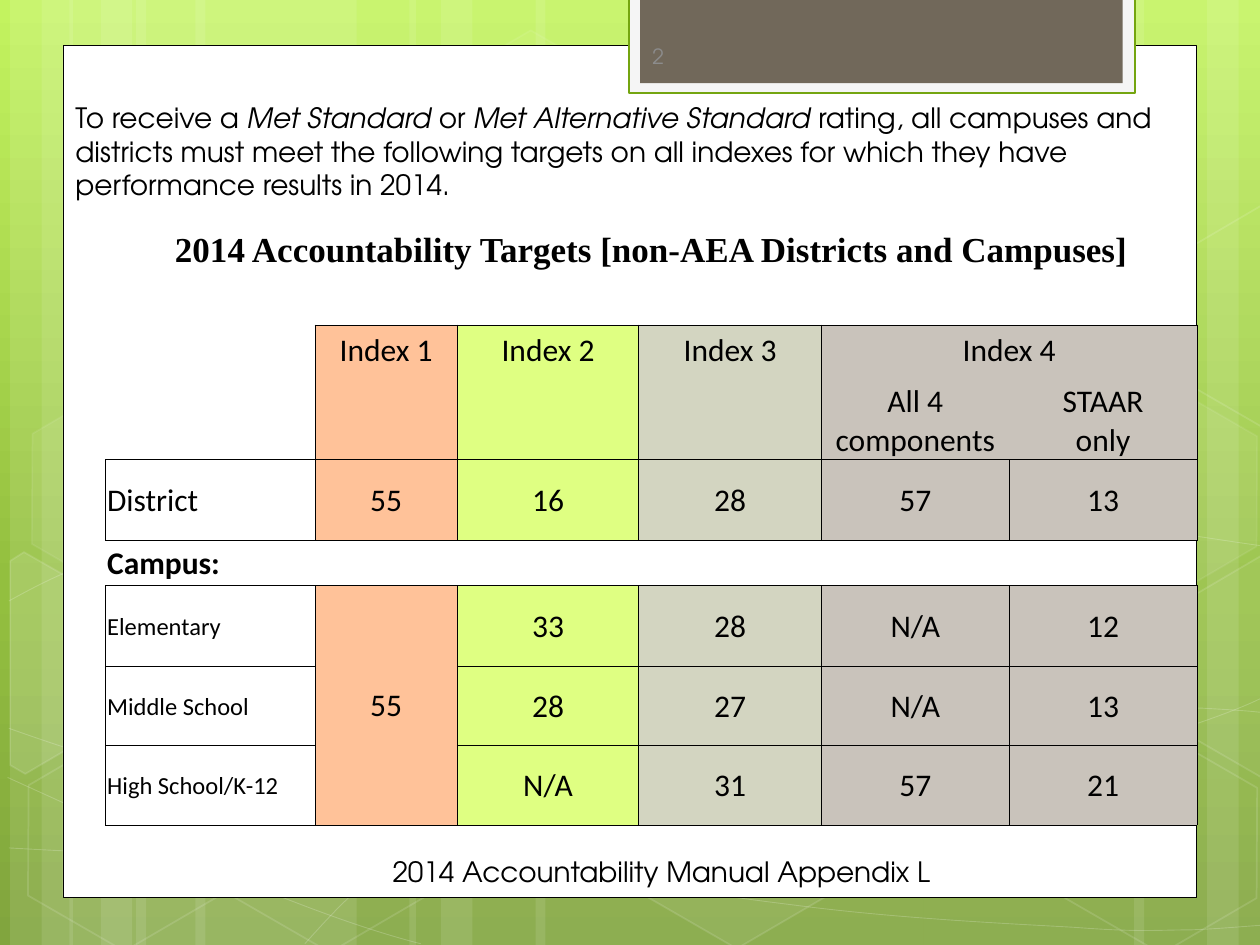
from copy import deepcopy
from itertools import product
from math import cos, radians, sin

from lxml.etree import SubElement
from pptx import Presentation
from pptx.dml.color import RGBColor
from pptx.enum.shapes import MSO_SHAPE as Preset
from pptx.enum.text import MSO_ANCHOR as Anchor, MSO_AUTO_SIZE as AutoSize, PP_ALIGN as Align
from pptx.oxml.ns import qn
from pptx.util import Inches, Pt

WHITE = RGBColor(0xFF, 0xFF, 0xFF)
BLACK = RGBColor(0, 0, 0)
GREEN = RGBColor(0x74, 0xA5, 0x10)
BROWN = RGBColor(0x71, 0x68, 0x5A)
PALE = RGBColor(0xF5, 0xF5, 0xF5)
GRAY = RGBColor(0x8C, 0x8C, 0x8C)
GRADIENT = [(0, RGBColor(0xC3, 0xF3, 0x5F)), (0.62, RGBColor(0x93, 0xBF, 0x3F)),
            (1, RGBColor(0x81, 0xA5, 0x3E))]
PEACH = RGBColor(0xFF, 0xC2, 0x99)
LIME = RGBColor(0xDF, 0xFF, 0x82)
SAGE = RGBColor(0xD3, 0xD5, 0xC1)
TAUPE = RGBColor(0xC9, 0xC3, 0xBB)
COLUMN_COLORS = [None, PEACH, LIME, SAGE, TAUPE, TAUPE]

HEADING_FONT = "TeX Gyre Adventor"
NO_GRID_STYLE = "{2D5ABB26-0587-4C30-8999-92F81FD0307C}"
TILT = 30

# Left edge, width and rotation of the full-height stripes
STRIPES = [(1.08, 1.75, 0), (0.08, 0.5, 0), (0.33, 0.83, 0), (1.55, 1.75, 0), (0.55, 0.5, 0),
           (0.8, 0.83, 0), (7.33, 1.75, 180), (9.58, 0.5, 180), (9, 0.83, 180),
           (4.25, 3.08, 0), (3.25, 0.5, 0), (3.5, 0.83, 0)]
# Each curve: a start point, then three points for every Bezier segment
CURVES = [
    [(0.07, 6.73), (0.61, 6.76), (1.15, 6.79), (1.9, 6.78), (2.65, 6.77), (3.58, 6.75),
     (4.58, 6.65), (5.58, 6.55), (7, 6.36), (7.92, 6.17), (8.83, 5.98), (9.77, 5.68), (10.07, 5.51)],
    [(0.07, 4.77), (0.36, 4.61), (0.65, 4.46), (1.21, 4.31), (1.78, 4.16), (2.59, 3.94),
     (3.47, 3.87), (4.36, 3.8), (5.44, 3.79), (6.54, 3.87), (7.64, 3.95), (9.47, 4.26), (10.07, 4.34)],
    [(0.06, 6.17), (1.27, 6.72), (2.47, 7.27), (3.34, 7.49)],
    [(0.07, 5.78), (0.38, 5.89), (0.7, 6), (1.28, 6.16), (1.86, 6.31), (2.73, 6.56), (3.57, 6.73),
     (4.4, 6.9), (5.45, 7.08), (6.28, 7.18), (7.11, 7.29), (8, 7.33), (8.53, 7.36),
     (9.05, 7.4), (9.19, 7.38), (9.45, 7.38), (9.71, 7.37), (9.89, 7.35), (10.07, 7.34)],
    [(2.42, 7.49), (2.6, 7.29), (2.78, 7.09), (3.02, 6.91), (3.26, 6.73), (3.6, 6.53), (3.88, 6.39),
     (4.16, 6.25), (4.33, 6.19), (4.7, 6.09), (5.06, 5.99), (5.73, 5.85), (6.08, 5.78),
     (6.44, 5.71), (6.49, 5.71), (6.8, 5.69), (7.11, 5.66), (7.6, 5.63), (7.94, 5.62),
     (8.29, 5.61), (8.86, 5.62), (8.86, 5.62), (9.08, 5.62), (9.31, 5.62), (9.53, 5.62),
     (9.71, 5.63), (9.88, 5.64), (9.97, 5.65), (10.06, 5.66), (10.03, 5.65), (10.06, 5.66)],
]
# Left, top, fill opacity and line opacity in percent
LEFT_HEXAGONS = [(3.34, 0.36, 4, 8), (4.97, 5.89, 6, 12)]
MIDDLE_HEXAGONS = [(0.11, 5.91, 0, 12), (0.14, 3.12, 7, 8), (1.74, 5.92, 0, 12),
                   (7.53, 4.53, 10, 12), (8.34, 5.93, 0, 12), (8.34, 3.14, 7, 8)]
# Hexagons cut off by the slide edge: center, points as seen and fill opacity
LEFT_CUT = [((0.36, 5.35), [(0.08, 4.45), (0.19, 4.38), (0.96, 4.82), (0.95, 5.7),
                            (0.2, 6.14), (0.08, 6.07)], 10)]
RIGHT_CUTS = [
    ((9.85, 5.2), [(9.26, 4.85), (10.01, 4.41), (10.09, 4.46), (10.09, 6.13),
                   (10.02, 6.17), (9.26, 5.73)], 4),
    ((9.85, 2.41), [(9.26, 2.07), (10.01, 1.63), (10.1, 1.68), (10.09, 3.35),
                    (10.02, 3.39), (9.26, 2.95)], 0),
]

COLUMN_WIDTHS = [1.66, 1.13, 1.44, 1.45, 1.49, 1.49]
ROW_HEIGHTS = [0.48, 0.44, 0.36, 0.71, 0.64, 0.36, 0.64, 0.63, 0.63, 0.36]
ROWS = [
    ["2014 Accountability Targets [non-AEA Districts and Campuses]"],
    [],
    ["", "Index 1", "Index 2", "Index 3", "Index 4"],
    ["", "", "", "", "All 4 components", "STAAR\nonly"],
    ["District", "55", "16", "28", "57", "13"],
    ["Campus:"],
    ["Elementary", "55", "33", "28", "N/A", "12"],
    ["Middle School", "", "28", "27", "N/A", "13"],
    ["High School/K-12", "", "N/A", "31", "57", "21"],
    [],
]
# Bordered sides of each cell: L, R, T, B
BORDERS = [[""] * 6, [""] + ["B"] * 5, ["R"] + ["LRT"] * 5,
           ["RB", "LRB", "LRB", "LRB", "LB", "RB"], ["LRTB"] * 6, ["TB"] * 6,
           ["LRTB"] * 6, ["LRTB"] * 6, ["LRTB"] * 6, ["T"] * 6]
MERGES = [(0, 0, 0, 5), (2, 4, 2, 5), (6, 1, 8, 1), (9, 2, 9, 4)]


def set_opacity(fill, percent):
    if percent < 100:
        color = fill._xPr.find(".//" + qn("a:srgbClr"))
        SubElement(color, qn("a:alpha"), val=str(percent * 1000))


def style_shape(shape, fill=None, line=None, width=1, fill_opacity=100, line_opacity=100):
    shape.shadow.inherit = False
    if fill is None or fill_opacity == 0:
        shape.fill.background()
    else:
        shape.fill.solid()
        shape.fill.fore_color.rgb = fill
        set_opacity(shape.fill, fill_opacity)
    if line is None:
        shape.line.fill.background()
    else:
        shape.line.color.rgb = line
        shape.line.width = Pt(width)
        set_opacity(shape.line.fill, line_opacity)


def add_preset(slide, preset, box, rotation=0, **style):
    shape = slide.shapes.add_shape(preset, *map(Inches, box))
    shape.rotation = rotation
    style_shape(shape, **style)
    return shape


def add_outline(slide, points, close, **style):
    first, *others = [(Inches(x), Inches(y)) for x, y in points]
    builder = slide.shapes.build_freeform(*first)
    builder.add_line_segments(others, close=close)
    shape = builder.convert_to_shape()
    style_shape(shape, **style)
    return shape


def add_curve(slide, controls, **style):
    """Draw the control polygon, then turn every three lines into one Bezier segment."""
    shape = add_outline(slide, controls, False, **style)
    outline = next(shape._element.iter(qn("a:moveTo"))).getparent()
    lines = outline.findall(qn("a:lnTo"))
    for i in range(0, len(lines), 3):
        segment = SubElement(outline, qn("a:cubicBezTo"))
        for line in lines[i:i + 3]:
            segment.append(line[0])
            outline.remove(line)


def add_hexagons(slide, hexagons):
    for left, top, fill_opacity, line_opacity in hexagons:
        hexagon = add_preset(slide, Preset.HEXAGON, (left, top, 1.75, 1.52), TILT, fill=WHITE,
                             line=WHITE, fill_opacity=fill_opacity, line_opacity=line_opacity)
        hexagon.adjustments[0], hexagon.adjustments[1] = 0.285, 1.155


def add_cut_hexagons(slide, hexagons):
    c, s = cos(radians(TILT)), sin(radians(TILT))
    for (cx, cy), points, opacity in hexagons:
        upright = [(cx + (x - cx) * c + (y - cy) * s, cy - (x - cx) * s + (y - cy) * c)
                   for x, y in points]
        add_outline(slide, upright, True, fill=WHITE, line=WHITE,
                    fill_opacity=opacity, line_opacity=12).rotation = TILT


def format_run(run, font, size, color=BLACK, bold=False, italic=False):
    run.font.name, run.font.size = font, Pt(size)
    run.font.bold, run.font.italic = bold, italic
    run.font.color.rgb = color


def add_text(slide, box, pieces, align=Align.LEFT, size=16, color=BLACK):
    """Add one paragraph whose odd pieces are italic."""
    text_frame = slide.shapes.add_textbox(*map(Inches, box)).text_frame
    text_frame.word_wrap = True
    text_frame.auto_size = AutoSize.SHAPE_TO_FIT_TEXT
    paragraph = text_frame.paragraphs[0]
    paragraph.alignment = align
    for i, piece in enumerate(pieces):
        run = paragraph.add_run()
        run.text = piece
        format_run(run, HEADING_FONT, size, color, italic=i % 2 == 1)


def set_borders(cell, sides):
    properties = cell._tc.get_or_add_tcPr()
    for i, side in enumerate("LRTB"):
        line = properties.makeelement(qn("a:ln" + side), {"w": str(Pt(0.5))})
        properties.insert(i, line)
        if side in sides:
            SubElement(SubElement(line, qn("a:solidFill")), qn("a:srgbClr"), val=str(BLACK))
        else:
            SubElement(line, qn("a:noFill"))


def fill_cell(cell, row, column, text):
    cell.margin_left = cell.margin_right = cell.margin_top = Inches(0.01)
    cell.margin_bottom = 0
    cell.vertical_anchor = Anchor.BOTTOM if row < 4 else Anchor.MIDDLE
    color = COLUMN_COLORS[column] if row in (2, 3, 4, 6, 7, 8) else None
    if color is None:
        cell.fill.background()
    else:
        cell.fill.solid()
        cell.fill.fore_color.rgb = color
    cell.text_frame.text = text
    font, size = ("Times New Roman", 20) if row == 0 else ("Calibri", 14 if row > 5 and column == 0 else 18)
    for paragraph in cell.text_frame.paragraphs:
        paragraph.alignment = Align.CENTER if row == 0 or column > 0 else Align.LEFT
        for run in paragraph.runs:
            format_run(run, font, size, bold=row in (0, 5))


def add_targets_table(slide):
    box = map(Inches, (0.84, 1.66, sum(COLUMN_WIDTHS), sum(ROW_HEIGHTS)))
    table = slide.shapes.add_table(len(ROWS), len(COLUMN_WIDTHS), *box).table
    table.first_row = table.horz_banding = False
    table._tbl.tblPr.find(qn("a:tableStyleId")).text = NO_GRID_STYLE
    for column, width in zip(table.columns, COLUMN_WIDTHS):
        column.width = Inches(width)
    for row, height in zip(table.rows, ROW_HEIGHTS):
        row.height = Inches(height)
    for top, left, bottom, right in MERGES:
        table.cell(top, left).merge(table.cell(bottom, right))
    for row, column in product(range(len(ROWS)), range(len(COLUMN_WIDTHS))):
        cell = table.cell(row, column)
        fill_cell(cell, row, column, ROWS[row][column] if column < len(ROWS[row]) else "")
        set_borders(cell, BORDERS[row][column])


def set_background(slide):
    fill = slide.background.fill
    fill.gradient()
    fill.gradient_angle = 270
    stop_list = next(slide._element.iter(qn("a:gsLst")))
    stop_list.append(deepcopy(stop_list[-1]))
    for stop, (position, color) in zip(fill.gradient_stops, GRADIENT):
        stop.position = position
        stop.color.rgb = color


def add_decoration(slide):
    for left, width, rotation in STRIPES:
        add_preset(slide, Preset.RECTANGLE, (left, 0, width, 7.5), rotation, fill=WHITE, fill_opacity=10)
    for controls in CURVES:
        add_curve(slide, controls, line=WHITE, width=0.5, line_opacity=20)
    add_hexagons(slide, LEFT_HEXAGONS)
    add_cut_hexagons(slide, LEFT_CUT)
    add_hexagons(slide, MIDDLE_HEXAGONS)
    add_cut_hexagons(slide, RIGHT_CUTS)


def main():
    presentation = Presentation()
    presentation.slide_width, presentation.slide_height = Inches(10), Inches(7.5)
    slide = presentation.slides.add_slide(presentation.slide_layouts[6])
    set_background(slide)
    add_decoration(slide)
    # White panel and the tab with the slide number
    add_preset(slide, Preset.RECTANGLE, (0.5, 0.36, 9, 6.76), fill=WHITE, line=BLACK, width=0.5)
    add_preset(slide, Preset.RECTANGLE, (4.99, -0.02, 4.02, 0.76), fill=PALE, line=GREEN, width=1.25)
    add_preset(slide, Preset.RECTANGLE, (5.08, -0.02, 3.83, 0.68), fill=BROWN)
    add_text(slide, (5.08, 0.3, 0.6, 0.3), ["2"], size=12, color=GRAY)
    # Introduction, source and targets
    add_text(slide, (0.5, 0.75, 9.48, 0.91), [
        "To receive a ", "Met Standard ", "or ", "Met Alternative Standard ",
        "rating, all campuses and districts must meet the following targets on all indexes "
        "for which they have performance results in 2014."])
    add_text(slide, (1.59, 6.73, 7.32, 0.37), ["2014 Accountability Manual Appendix L"], Align.CENTER)
    add_targets_table(slide)
    presentation.save("out.pptx")


if __name__ == "__main__":
    main()
